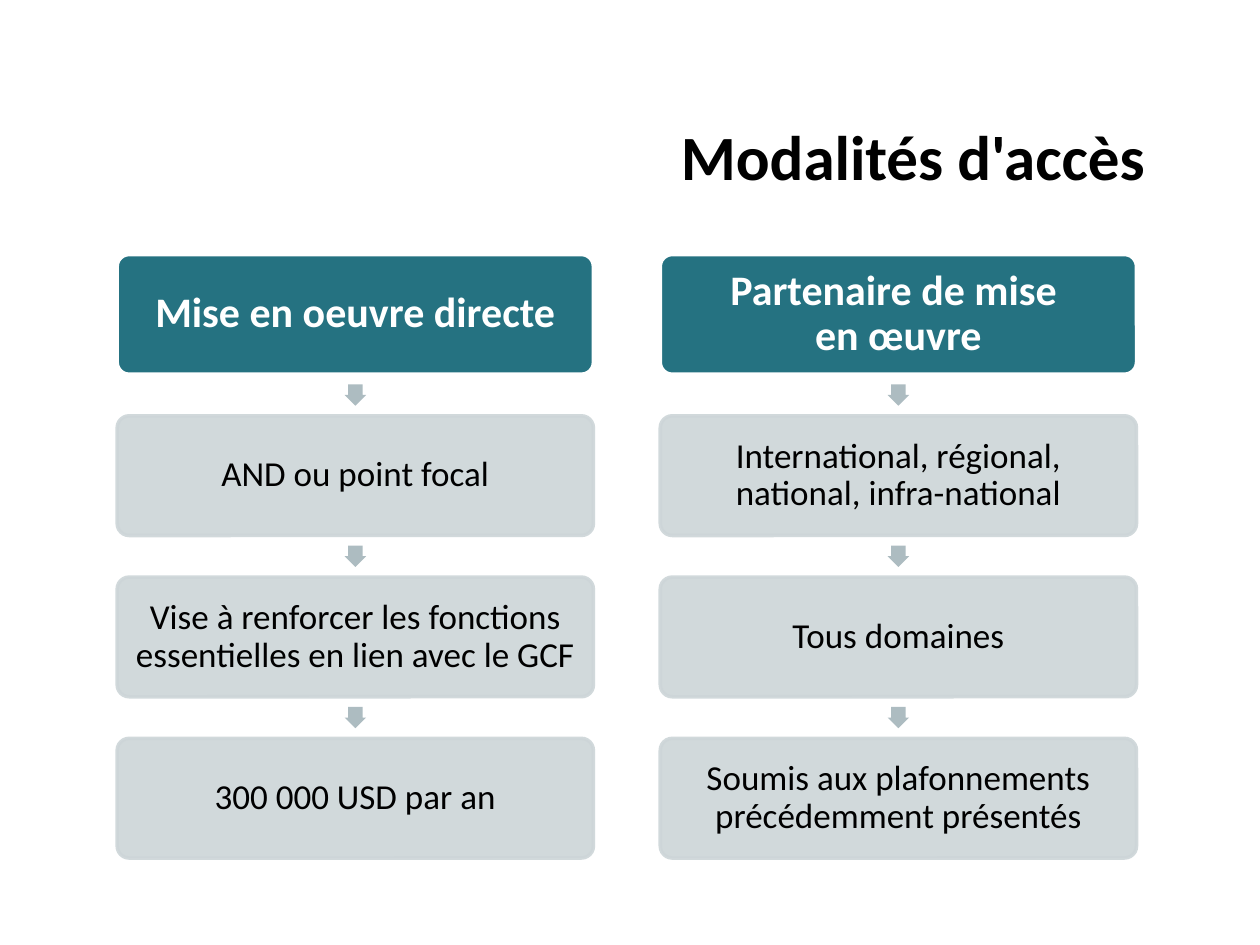
"""Build the slide comparing the two access modalities as vertical flows."""
from lxml.etree import SubElement
from pptx import Presentation
from pptx.dml.color import RGBColor
from pptx.enum.shapes import MSO_SHAPE as Shape
from pptx.enum.text import MSO_ANCHOR as Anchor, MSO_AUTO_SIZE as AutoSize, PP_ALIGN as Align
from pptx.oxml.ns import qn
from pptx.util import Inches, Pt

COLORS = {"header": "257281", "card": "CDD5D8", "arrow": "ADBCC1", "white": "FFFFFF", "black": "000000"}
FLOWS = [
    ["Mise en oeuvre directe", "AND ou point focal",
     "Vise à renforcer les fonctions essentielles en lien avec le GCF", "300 000 USD par an"],
    ["Partenaire de mise \nen œuvre", "International, régional, national, infra-national",
     "Tous domaines", "Soumis aux plafonnements précédemment présentés"],
]
LEFT, TOP, WIDTH, HEIGHT = 0.93, 2.02, 3.78, 0.95
COLUMN_STEP, ROW_STEP, ARROW_SIZE = 4.31, 1.28, 0.17
HEADER = {"size": Pt(24), "bold": True, "name": "Calibri"}
CARD = {"size": Pt(20), "bold": False, "name": "Calibri"}
TITLE = {"size": Pt(36), "bold": True, "name": "Calibri"}
MARGINS = ("margin_left", "margin_right", "margin_top", "margin_bottom")


def paint(fill, color, opacity=100):
    fill.solid()
    fill.fore_color.rgb = RGBColor.from_string(COLORS[color])
    if opacity < 100:
        for element in fill._xPr.iter(qn("a:srgbClr")):
            if element.find(qn("a:alpha")) is None:
                SubElement(element, qn("a:alpha"), val=str(opacity * 1000))


def write(text_frame, text, font_format, color, alignment):
    text_frame.word_wrap = True
    paragraph = text_frame.paragraphs[0]
    paragraph.text = text
    paragraph.alignment = alignment
    paragraph.line_spacing = 0.9
    for run in paragraph.runs:
        for attribute, value in font_format.items():
            setattr(run.font, attribute, value)
        run.font.color.rgb = RGBColor.from_string(COLORS[color])


presentation = Presentation()
presentation.slide_width, presentation.slide_height = Inches(10), Inches(7.5)
slide = presentation.slides.add_slide(presentation.slide_layouts[5])

for column, texts in enumerate(FLOWS):
    left = LEFT + column * COLUMN_STEP
    for row, text in enumerate(texts):
        top = TOP + row * ROW_STEP
        is_header = row == 0
        if not is_header:
            arrow = slide.shapes.add_shape(
                Shape.RIGHT_ARROW, Inches(left + (WIDTH - ARROW_SIZE) / 2), Inches(top - 0.25),
                Inches(ARROW_SIZE), Inches(ARROW_SIZE))
            arrow.rotation = 90
            arrow.adjustments[0] = 0.67
            arrow.shadow.inherit = False
            paint(arrow.fill, "arrow")
            arrow.line.fill.background()
        box = slide.shapes.add_shape(
            Shape.ROUNDED_RECTANGLE, Inches(left), Inches(top), Inches(WIDTH), Inches(HEIGHT))
        box.adjustments[0] = 0.1
        box.shadow.inherit = False
        opacity = 100 if is_header else 90
        paint(box.fill, "header" if is_header else "card", opacity)
        paint(box.line.fill, "white" if is_header else "card", opacity)
        box.line.width = Pt(2)
        for margin in MARGINS:
            setattr(box.text_frame, margin, Inches(0.06))
        box.text_frame.vertical_anchor = Anchor.MIDDLE
        write(box.text_frame, text, HEADER if is_header else CARD,
              "white" if is_header else "black", Align.CENTER)

title = slide.shapes.title
title.left, title.top, title.width, title.height = Inches(0.28), Inches(0.95), Inches(8.91), Inches(0.69)
title.text_frame.auto_size = AutoSize.NONE
title.text_frame.vertical_anchor = Anchor.TOP
write(title.text_frame, "Modalités d'accès", TITLE, "black", Align.RIGHT)

presentation.save("out.pptx")
